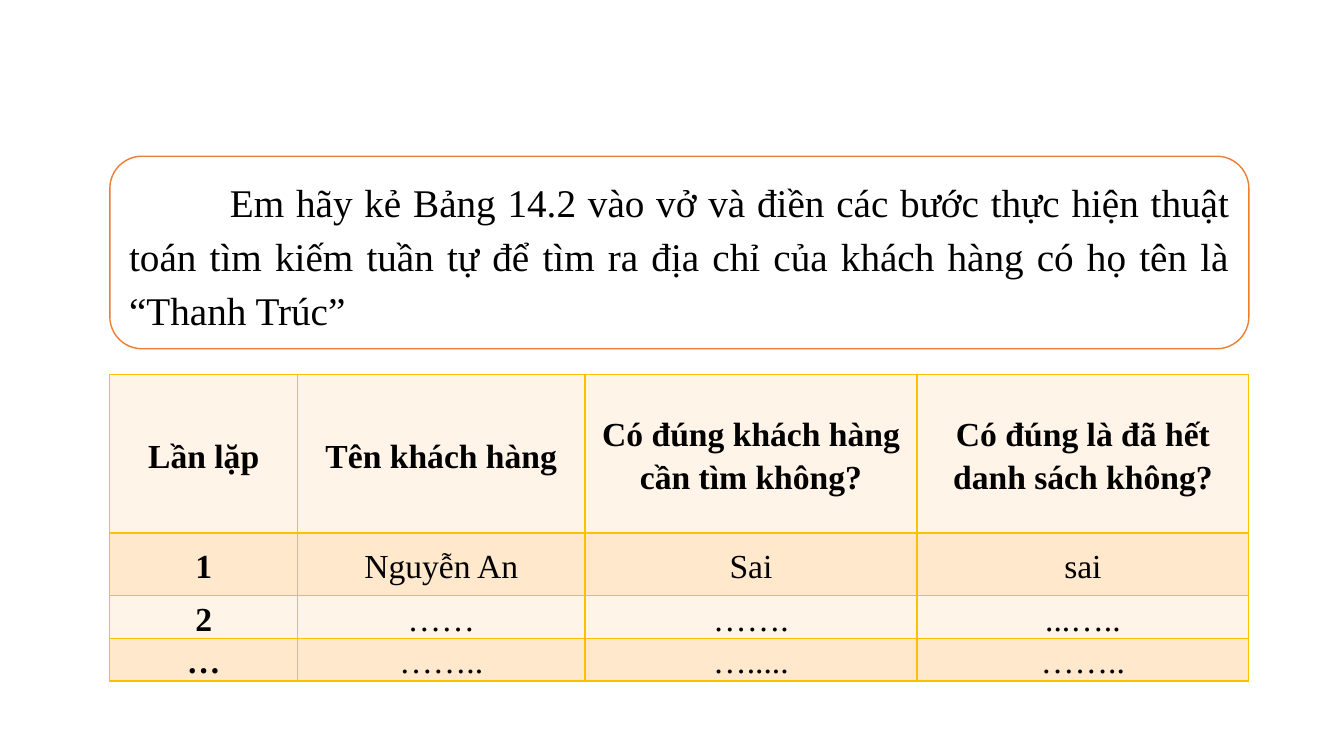
from pptx import Presentation
from pptx.dml.color import RGBColor as RGB
from pptx.enum.shapes import MSO_SHAPE as Shape
from pptx.enum.text import MSO_ANCHOR as Anchor, MSO_AUTO_SIZE as Auto, PP_ALIGN as Align
from pptx.oxml import parse_xml
from pptx.oxml.ns import nsdecls
from pptx.util import Pt

TASK = ("Em hãy kẻ Bảng 14.2 vào vở và điền các bước thực hiện thuật toán "
        "tìm kiếm tuần tự để tìm ra địa chỉ của khách hàng có họ tên là “Thanh Trúc”")
ROWS = [
    ("Lần lặp", "Tên khách hàng", "Có đúng khách hàng cần tìm không?",
     "Có đúng là đã hết danh sách không?"),
    ("1", "Nguyễn An", "Sai", "sai"),
    ("2", "……", "…….", "...….."),
    ("…", "……..", "….....", "…….."),
]

THEME = {
    "font": "Times New Roman", "ink": "000000", "paper": "FFFFFF",
    "frame": "ED7D31", "grid": "FFC000", "bands": ("FFF4E7", "FFE8CC"),
    "task": 28, "cell": 24,
}
LEFT, WIDTH = 78.5, 813.6
TASK_TOP, TASK_HIGH = 111.6, 137.5
GRID_TOP = 267.8
COLS = (134, 205.4, 237.1, 237.1)
HIGHS = (113, 44.6, 22.3, 22.3)


def write(frame, text, size, align, bold=False, indent=0):
    frame.word_wrap = True
    par = frame.paragraphs[0]
    par.alignment = align
    par.line_spacing = 1.15
    par.space_before = par.space_after = Pt(6)
    if indent:
        par._p.get_or_add_pPr().set("indent", str(Pt(indent)))
    run = par.add_run()
    run.text = text
    font = run.font
    font.name, font.size, font.bold = THEME["font"], Pt(size), bold
    font.color.rgb = RGB.from_string(THEME["ink"])


def paint(fill, color):
    fill.solid()
    fill.fore_color.rgb = RGB.from_string(color)


def edge(cell, color, width):
    """Draw the four borders of a table cell."""
    props = cell._tc.get_or_add_tcPr()
    for side in "LRTB":
        props.append(parse_xml(
            f'<a:ln{side} {nsdecls("a")} w="{Pt(width)}"><a:solidFill>'
            f'<a:srgbClr val="{color}"/></a:solidFill></a:ln{side}>'))


def add_grid(slide):
    table = slide.shapes.add_table(
        len(ROWS), len(COLS), Pt(LEFT), Pt(GRID_TOP), Pt(WIDTH), Pt(sum(HIGHS))).table
    for col, wide in zip(table.columns, COLS):
        col.width = Pt(wide)
    for r, (texts, high) in enumerate(zip(ROWS, HIGHS)):
        table.rows[r].height = Pt(high)
        for c, text in enumerate(texts):
            cell = table.cell(r, c)
            cell.vertical_anchor = Anchor.MIDDLE
            cell.margin_left = cell.margin_right = Pt(5)
            cell.margin_top = cell.margin_bottom = Pt(0)
            edge(cell, THEME["grid"], 1)
            paint(cell.fill, THEME["bands"][r % 2])
            write(cell.text_frame, text, THEME["cell"], Align.CENTER,
                  bold=r == 0 or c == 0)


def add_task(slide):
    box = slide.shapes.add_shape(
        Shape.ROUNDED_RECTANGLE, Pt(LEFT), Pt(TASK_TOP), Pt(WIDTH), Pt(TASK_HIGH))
    box.shadow.inherit = False
    paint(box.fill, THEME["paper"])
    paint(box.line.fill, THEME["frame"])
    box.line.width = Pt(1)
    write(box.text_frame, TASK, THEME["task"], Align.JUSTIFY, indent=72)
    box.text_frame.auto_size = Auto.SHAPE_TO_FIT_TEXT


def main():
    deck = Presentation()
    deck.slide_width, deck.slide_height = Pt(960), Pt(540)
    slide = deck.slides.add_slide(deck.slide_layouts[6])
    add_grid(slide)
    add_task(slide)
    deck.save("out.pptx")


if __name__ == "__main__":
    main()
